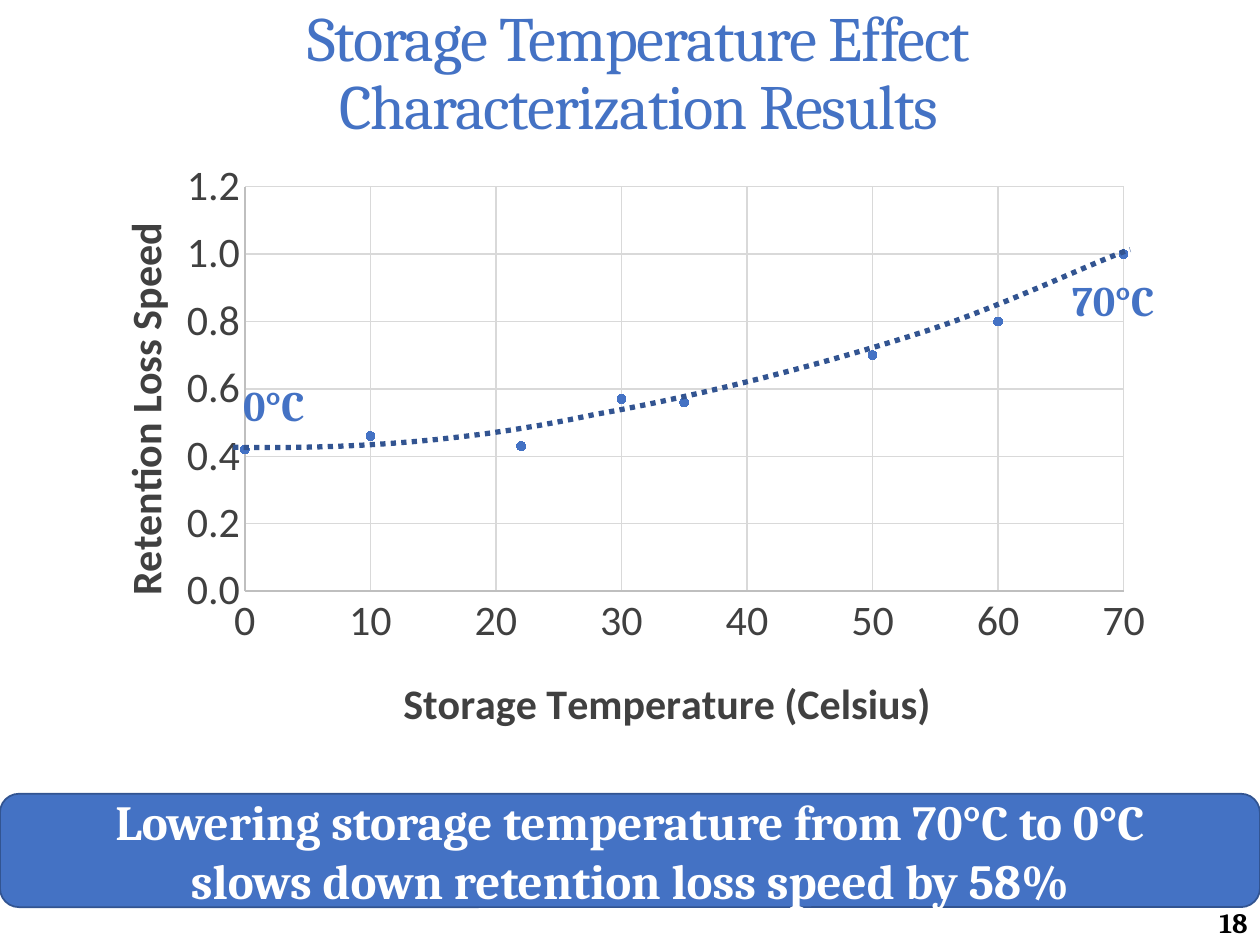
"""Build the storage temperature slide."""
from dataclasses import dataclass

from lxml import etree
from pptx import Presentation, util as u
from pptx.chart import data as cd
from pptx.dml import color as col
from pptx.enum import chart as ch, dml, shapes, text
from pptx.oxml import ns

Pt = u.Pt
BLUE, NAVY, DARK, GRID, AXIS = "4472C4", "325491", "404040", "D9D9D9", "BFBFBF"
SERIF = "Cambria"
POINTS = [(0, 0.42), (10, 0.46), (22, 0.43), (30, 0.57),
          (35, 0.56), (50, 0.7), (60, 0.8), (70, 1)]
START = (133.2, 255.6)
CURVE = [((179.3, 256.3), (254.2, 255.6), (339.8, 236.9)),
         ((403.9, 225.4), (469.4, 208.1), (519.8, 192.2)),
         ((571, 176.4), (624.2, 149.8), (645.8, 142.6))]
STEPS = 16


@dataclass
class Box:
    """A place on the slide, in points."""
    left: float
    top: float
    width: float
    height: float

    def size(self) -> tuple:
        """Return the four lengths."""
        return Pt(self.left), Pt(self.top), Pt(self.width), Pt(self.height)


@dataclass
class Label:
    """A free line of text with its style."""
    words: str
    box: Box
    size: float = 24
    color: str = BLUE
    align: int = text.PP_ALIGN.LEFT
    anchor: int = text.MSO_ANCHOR.TOP
    wrap: bool = True


LABELS = [
    Label("18", Box(645.1, 513.4, 74.9, 26.6), 16, "000000",
          text.PP_ALIGN.RIGHT, text.MSO_ANCHOR.BOTTOM),
    Label("70°C", Box(605.5, 153.4, 66.2, 36), wrap=False),
    Label("0°C", Box(131.8, 213.1, 61.9, 36)),
]


def paint(item, color: str) -> None:
    """Give a fill or line format a solid colour."""
    item.solid()
    item.fore_color.rgb = col.RGBColor.from_string(color)


def style(font, size: float, color: str, face: str, bold: bool = False) -> None:
    """Set the look of a font."""
    font.size, font.name, font.bold = Pt(size), face, bold
    font.color.rgb = col.RGBColor.from_string(color)


def stroke(line, color: str, width: float) -> None:
    """Set the colour and width of a line."""
    paint(line.fill, color)
    line.width = Pt(width)


def write(frame, lines: list, size: float, color: str, align: int,
          anchor: int, bold: bool = True):
    """Write lines into one paragraph and return it."""
    frame.vertical_anchor = anchor
    para = frame.paragraphs[0]
    para.alignment = align
    for i, line in enumerate(lines):
        if i:
            para.add_line_break()
        run = para.add_run()
        run.text = line
        style(run.font, size, color, SERIF, bold)
    return para


def head(slide) -> None:
    """Fill the title placeholder."""
    title = slide.shapes.title
    title.left, title.top, title.width, title.height = Box(0, 0, 720, 85.7).size()
    frame = title.text_frame
    frame.auto_size = text.MSO_AUTO_SIZE.NONE
    para = write(frame, ["Storage Temperature Effect", "Characterization Results"],
                 36, BLUE, text.PP_ALIGN.CENTER, text.MSO_ANCHOR.MIDDLE, False)
    para.line_spacing = 0.9
    props = para._p.get_or_add_pPr()
    props.set("marL", str(Pt(10)))
    props.set("indent", "0")
    for run in para.runs:
        run._r.get_or_add_rPr().set("spc", "-70")


def label(slide, item: Label) -> None:
    """Add a text box."""
    frame = slide.shapes.add_textbox(*item.box.size()).text_frame
    frame.word_wrap = item.wrap
    write(frame, [item.words], item.size, item.color, item.align, item.anchor)


def place(node, index: int, **parts) -> None:
    """Put a manual layout into a chart element."""
    for old in node.findall(ns.qn("c:layout")):
        node.remove(old)
    lay = etree.Element(ns.qn("c:layout"))
    node.insert(index, lay)
    man = etree.SubElement(lay, ns.qn("c:manualLayout"))
    for key, val in parts.items():
        etree.SubElement(man, ns.qn(f"c:{key}")).set("val", str(val))


def scale(axis, name: str, top: float, step: float, form: str,
          x: float, y: float) -> None:
    """Format an axis and its title."""
    axis.minimum_scale, axis.maximum_scale, axis.major_unit = 0, top, step
    axis.major_tick_mark = axis.minor_tick_mark = ch.XL_TICK_MARK.NONE
    axis.has_major_gridlines = True
    stroke(axis.major_gridlines.format.line, GRID, 0.75)
    stroke(axis.format.line, AXIS, 0.75)
    style(axis.tick_labels.font, 24, DARK, "Calibri")
    axis.tick_labels.number_format = form
    axis.tick_labels.number_format_is_linked = False
    title = axis.axis_title
    run = title.text_frame.paragraphs[0].add_run()
    run.text = name
    style(run.font, 24, DARK, "Calibri", True)
    place(title._element, 1, xMode="edge", yMode="edge", x=x, y=y)


def plot(slide) -> None:
    """Add the scatter chart."""
    data = cd.XyChartData()
    row = data.add_series("Series 1")
    for x, y in POINTS:
        row.add_data_point(x, y)
    chart = slide.shapes.add_chart(ch.XL_CHART_TYPE.XY_SCATTER,
                                   *Box(37.4, 85.7, 629.3, 339.8).size(), data).chart
    chart.has_title = chart.has_legend = False
    style(chart.font, 24, DARK, "Calibri")
    chart.plots[0].vary_by_categories = False
    scale(chart.category_axis, "Storage Temperature (Celsius)", 70, 10, "General",
          0.3, 0.87)
    scale(chart.value_axis, "Retention Loss Speed", 1.2, 0.2, "#,##0.0", 0.04, 0.11)
    body = chart.value_axis.axis_title._element.find(".//" + ns.qn("a:bodyPr"))
    body.set("rot", "-5400000")
    body.set("vert", "horz")
    place(chart._chartSpace.find(".//" + ns.qn("c:plotArea")), 0,
          layoutTarget="inner", xMode="edge", yMode="edge",
          x=0.163, y=0.062, w=0.798, h=0.68)
    dots = chart.plots[0].series[0]
    dots.smooth = False
    dots.format.line.fill.background()
    dots.marker.style, dots.marker.size = ch.XL_MARKER_STYLE.CIRCLE, 5
    paint(dots.marker.format.fill, BLUE)
    stroke(dots.marker.format.line, BLUE, 0.75)


def banner(slide) -> None:
    """Add the rounded bar with the finding."""
    bar = slide.shapes.add_shape(shapes.MSO_SHAPE.ROUNDED_RECTANGLE,
                                 *Box(0, 453.6, 720, 64.8).size())
    bar.shadow.inherit = False
    paint(bar.fill, BLUE)
    stroke(bar.line, NAVY, 1)
    write(bar.text_frame, ["Lowering storage temperature from 70°C to 0°C",
                           "slows down retention loss speed by 58%"],
          28, "FFFFFF", text.PP_ALIGN.CENTER, text.MSO_ANCHOR.MIDDLE)


def trend(slide) -> None:
    """Draw the dotted trend curve."""
    dots, last = [], START
    for b, c, d in CURVE:
        for i in range(1, STEPS + 1):
            t = i / STEPS
            s = 1 - t
            dots.append(tuple(Pt(s**3 * p + 3 * s * s * t * q + 3 * s * t * t * r + t**3 * e)
                              for p, q, r, e in zip(last, b, c, d)))
        last = d
    pen = slide.shapes.build_freeform(Pt(START[0]), Pt(START[1]))
    pen.add_line_segments(dots, close=False)
    curve = pen.convert_to_shape()
    curve.shadow.inherit = False
    curve.fill.background()
    stroke(curve.line, NAVY, 3)
    curve.line.dash_style = dml.MSO_LINE.ROUND_DOT


def main() -> None:
    """Build and save the slide."""
    deck = Presentation()
    deck.slide_width, deck.slide_height = Pt(720), Pt(540)
    slide = deck.slides.add_slide(deck.slide_layouts[5])
    head(slide)
    plot(slide)
    banner(slide)
    for item in LABELS:
        label(slide, item)
    trend(slide)
    deck.save("out.pptx")


if __name__ == "__main__":
    main()
